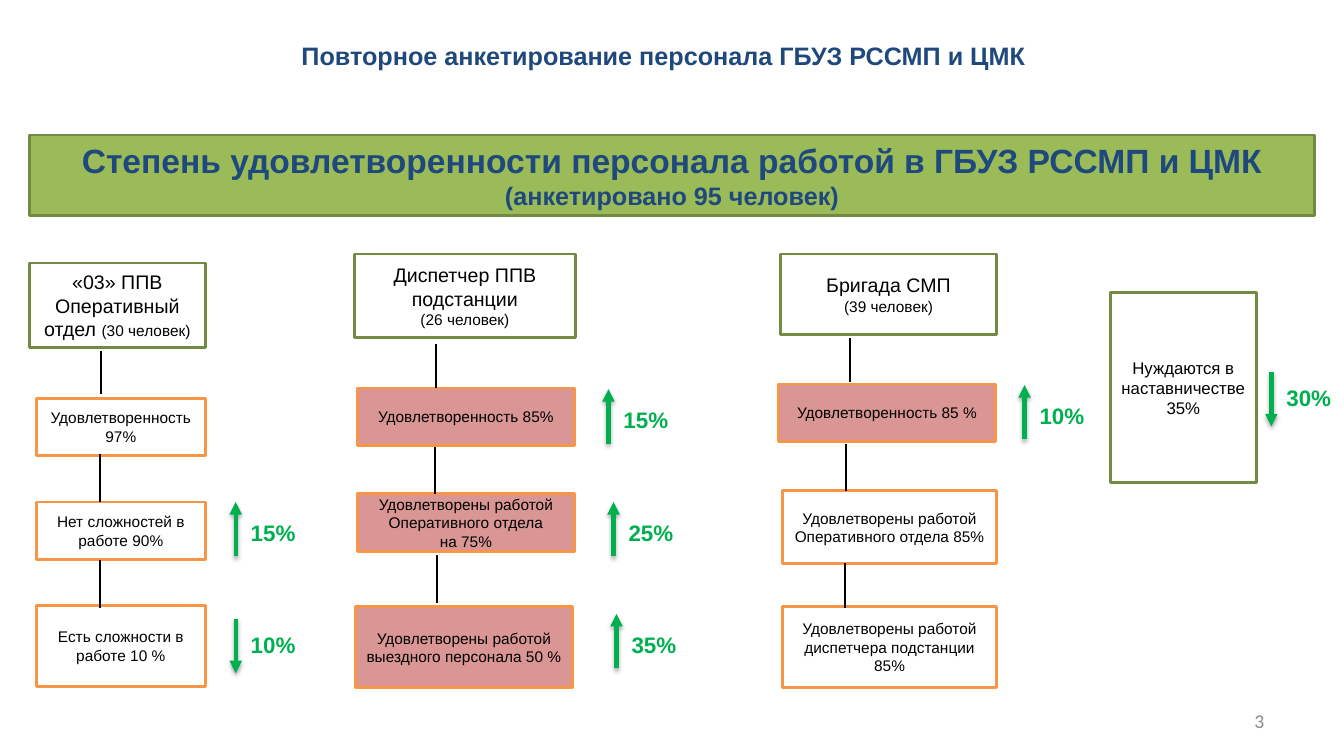
from dataclasses import dataclass

from lxml import etree
from pptx import Presentation
from pptx.dml.color import RGBColor
from pptx.enum.shapes import MSO_CONNECTOR, MSO_SHAPE
from pptx.enum.text import MSO_ANCHOR, MSO_AUTO_SIZE, PP_ALIGN
from pptx.oxml import parse_xml
from pptx.oxml.ns import nsdecls, qn
from pptx.util import Inches, Pt

RECT = MSO_SHAPE.RECTANGLE
STRAIGHT = MSO_CONNECTOR.STRAIGHT
MIDDLE = MSO_ANCHOR.MIDDLE
FIT_SHAPE = MSO_AUTO_SIZE.SHAPE_TO_FIT_TEXT
LEFT, CENTER, RIGHT = PP_ALIGN.LEFT, PP_ALIGN.CENTER, PP_ALIGN.RIGHT

WHITE = RGBColor(0xFF, 0xFF, 0xFF)
BLACK = RGBColor(0, 0, 0)
NAVY = RGBColor(0x1F, 0x49, 0x7D)
GRAY = RGBColor(0x8C, 0x8C, 0x8C)
LIME = RGBColor(0x9B, 0xBB, 0x59)
OLIVE = RGBColor(0x73, 0x8A, 0x42)
ORANGE = RGBColor(0xF7, 0x96, 0x46)
ROSE = RGBColor(0xD9, 0x96, 0x94)
GREEN = RGBColor(0x00, 0xB0, 0x50)

TREND_LENGTH = 0.54
SHADOW = (
    f'<a:effectLst {nsdecls("a")}><a:outerShdw blurRad="{Pt(3.1)}" dist="{Pt(1.8)}" '
    'dir="5400000" rotWithShape="0"><a:srgbClr val="000000"><a:alpha val="35000"/>'
    "</a:srgbClr></a:outerShdw></a:effectLst>"
)


@dataclass
class Line:
    text: str
    size: float
    note: str = ""
    note_size: float = 11


@dataclass
class Box:
    left: float
    top: float
    width: float
    height: float
    lines: list[Line]
    fill: RGBColor = WHITE
    border: RGBColor = ORANGE
    color: RGBColor = BLACK
    bold: bool = False


@dataclass
class Link:
    x: float
    top: float
    bottom: float


@dataclass
class Trend:
    x: float
    top: float
    label: str
    up: bool = True


BOXES = [
    Box(0.29, 1.34, 12.76, 0.8,
        [Line("Степень удовлетворенности персонала работой в ГБУЗ РССМП и ЦМК", 24),
         Line("(анкетировано 95 человек)", 18)], LIME, OLIVE, NAVY, True),
    Box(0.29, 2.61, 1.75, 0.84,
        [Line("«03» ППВ", 14), Line("Оперативный отдел ", 14, "(30 человек)")], border=OLIVE),
    Box(3.52, 2.52, 2.19, 0.83,
        [Line("Диспетчер ППВ подстанции", 14), Line("(26 человек)", 11)], border=OLIVE),
    Box(7.75, 2.52, 2.14, 0.8,
        [Line("Бригада СМП", 14), Line("(39 человек)", 11)], border=OLIVE),
    Box(11.02, 2.9, 1.45, 1.89, [Line("Нуждаются в наставничестве 35%", 12)], border=OLIVE),
    Box(0.36, 3.95, 1.68, 0.57, [Line("Удовлетворенность 97%", 11)]),
    Box(0.36, 4.98, 1.68, 0.57, [Line("Нет сложностей в работе 90%", 11)]),
    Box(0.36, 6.01, 1.68, 0.8, [Line("Есть сложности в работе 10 %", 11)]),
    Box(3.55, 3.85, 2.15, 0.57, [Line("Удовлетворенность 85%", 11)], ROSE),
    Box(3.55, 4.9, 2.15, 0.57,
        [Line("Удовлетворены работой Оперативного отдела", 11), Line("на 75%", 11)], ROSE),
    Box(3.53, 6.02, 2.15, 0.8,
        [Line("Удовлетворены работой выездного персонала 50 %", 11)], ROSE),
    Box(7.73, 3.81, 2.15, 0.57, [Line("Удовлетворенность 85 %", 11)], ROSE),
    Box(7.77, 4.87, 2.12, 0.72, [Line("Удовлетворены работой Оперативного отдела 85%", 11)]),
    Box(7.77, 6.02, 2.12, 0.8, [Line("Удовлетворены работой диспетчера подстанции 85%", 11)]),
]
LINKS = [
    Link(1, 3.48, 3.91), Link(0.99, 4.5, 4.98), Link(0.99, 5.56, 6.03),
    Link(4.33, 3.41, 3.85), Link(4.32, 4.43, 4.9), Link(4.34, 5.51, 5.98),
    Link(8.44, 3.35, 3.79), Link(8.4, 4.4, 4.87), Link(8.39, 5.59, 6.03),
]
TRENDS = [
    Trend(2.34, 4.98, "15%"), Trend(2.34, 6.14, "10%", False),
    Trend(6.04, 3.86, "15%"), Trend(6.09, 4.98, "25%"), Trend(6.12, 6.09, "35%"),
    Trend(10.17, 3.82, "10%"), Trend(12.62, 3.69, "30%", False),
]


def write(tf, lines: list[Line], color: RGBColor, bold: bool,
          align=CENTER, font: str = "Arial") -> None:
    for i, line in enumerate(lines):
        p = tf.paragraphs[0] if i == 0 else tf.add_paragraph()
        p.alignment = align
        p.font.name, p.font.size, p.font.bold = font, Pt(line.size), bold
        p.font.color.rgb = color
        p.add_run().text = line.text
        if line.note:
            r = p.add_run()
            r.text = line.note
            r.font.size = Pt(line.note_size)


def add_text(s, left: float, top: float, width: float, height: float, line: Line,
             color: RGBColor, bold: bool, align, font: str = "Arial"):
    sp = s.shapes.add_textbox(Inches(left), Inches(top), Inches(width), Inches(height))
    tf = sp.text_frame
    tf.word_wrap = True
    write(tf, [line], color, bold, align, font)
    return tf


def add_heading(s, left: float, top: float, width: float, height: float, line: Line,
                color: RGBColor, bold: bool, align, font: str) -> None:
    tf = add_text(s, left, top, width, height, line, color, bold, align, font)
    tf.vertical_anchor = MIDDLE
    tf.margin_left = tf.margin_right = Inches(0.12)
    tf.margin_top = tf.margin_bottom = Inches(0.06)


def add_box(s, box: Box) -> None:
    sp = s.shapes.add_shape(RECT, Inches(box.left), Inches(box.top),
                            Inches(box.width), Inches(box.height))
    sp.shadow.inherit = False
    sp.fill.solid()
    sp.fill.fore_color.rgb = box.fill
    sp.line.color.rgb = box.border
    sp.line.width = Pt(2)
    tf = sp.text_frame
    tf.word_wrap = True
    tf.vertical_anchor = MIDDLE
    write(tf, box.lines, box.color, box.bold)


def add_line(s, x: float, start: float, end: float, color: RGBColor, width: float):
    sp = s.shapes.add_connector(STRAIGHT, Inches(x), Inches(start), Inches(x), Inches(end))
    sp.line.color.rgb = color
    sp.line.width = Pt(width)
    return sp


def add_link(s, link: Link) -> None:
    sp = add_line(s, link.x, link.top, link.bottom, BLACK, 1.5)
    etree.SubElement(sp._element.spPr, qn("a:effectLst"))


def add_trend(s, trend: Trend) -> None:
    ends = trend.top, trend.top + TREND_LENGTH
    start, end = reversed(ends) if trend.up else ends
    sp = add_line(s, trend.x, start, end, GREEN, 3)
    etree.SubElement(sp.line._get_or_add_ln(), qn("a:tailEnd"), type="triangle")
    sp._element.spPr.append(parse_xml(SHADOW))
    label_top = trend.top + (0.12 if trend.up else 0.07)
    tf = add_text(s, trend.x + 0.05, label_top, 0.65, 0.37,
                  Line(trend.label, 16), GREEN, True, LEFT)
    tf.word_wrap = False
    tf.auto_size = FIT_SHAPE


def main() -> None:
    prs = Presentation()
    prs.slide_width, prs.slide_height = Inches(13.34), Inches(7.5)
    s = prs.slides.add_slide(prs.slide_layouts[6])
    add_heading(s, 0.84, 0.36, 11.49, 0.38,
                Line("Повторное анкетирование персонала ГБУЗ РССМП и ЦМК", 18),
                NAVY, True, CENTER, "Arial")
    add_heading(s, 9.56, 6.95, 3.11, 0.4, Line("3", 14), GRAY, False, RIGHT, "Calibri")
    for box in BOXES:
        add_box(s, box)
    for link in LINKS:
        add_link(s, link)
    for trend in TRENDS:
        add_trend(s, trend)
    prs.save("out.pptx")


if __name__ == "__main__":
    main()
